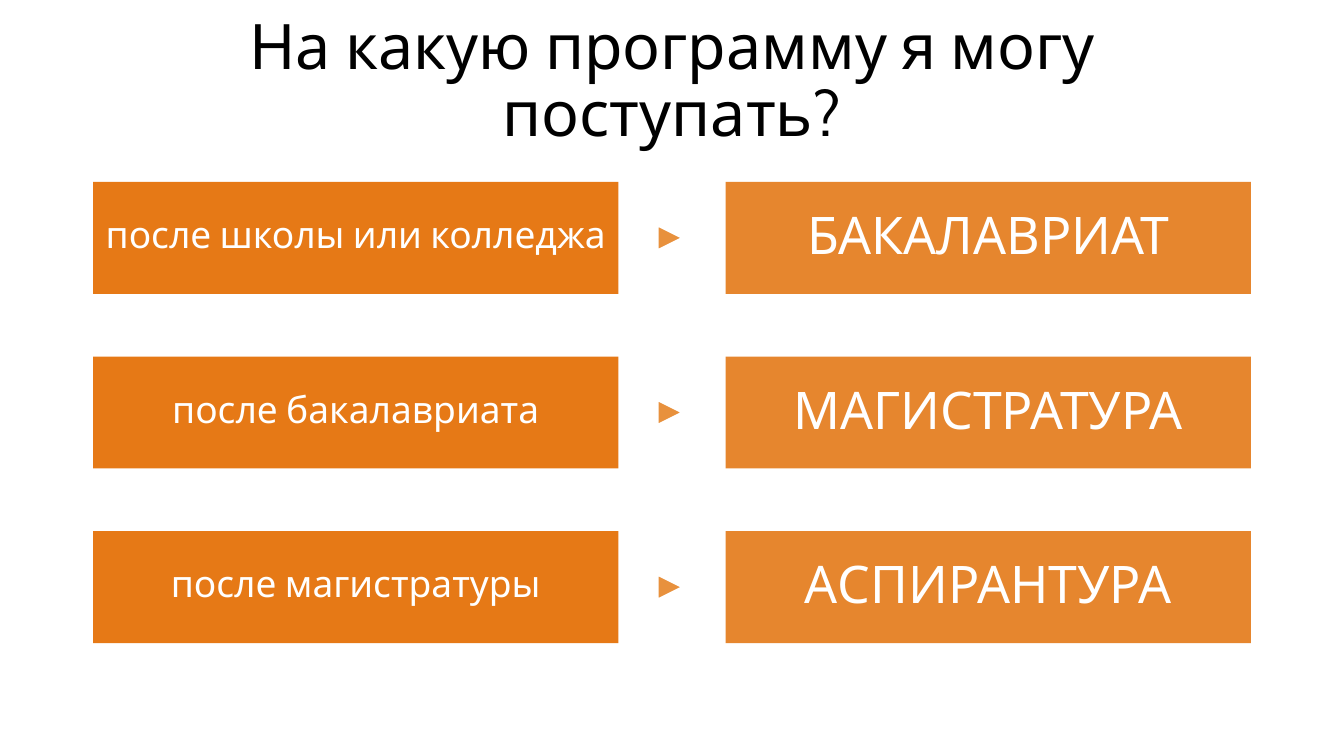
from dataclasses import dataclass

from pptx import Presentation, util as u
from pptx.dml.color import RGBColor
from pptx.enum import shapes, text


@dataclass(frozen=True)
class Theme:
    font: str = "Cabin"
    ink: str = "000000"
    paper: str = "FFFFFF"
    start_fill: str = "E67916"
    program_fill: str = "E6862E"
    arrow_fill: str = "E8913D"
    title_size: float = 89.6
    start_size: float = 53
    program_size: float = 74
    outline: float = 5


class PathwaySlide:
    """Grid of rows: a starting point, an arrow and a program."""

    width, height = 26.67, 15
    margin, box_width, box_height = 1.85, 10.42, 2.22
    first_row, row_step = 3.61, 3.465
    arrow_side = 0.54

    def __init__(self, deck, theme):
        self.theme = theme
        deck.slide_width, deck.slide_height = u.Inches(self.width), u.Inches(self.height)
        self.page = deck.slides.add_slide(deck.slide_layouts[6])

    def row_top(self, row):
        return self.first_row + row * self.row_step

    def set_words(self, shape, words, size, color, spacing, inset=0):
        frame = shape.text_frame
        frame.word_wrap = True
        frame.vertical_anchor = text.MSO_ANCHOR.MIDDLE
        frame.margin_left = frame.margin_right = u.Inches(inset)
        frame.margin_top = frame.margin_bottom = u.Inches(inset)
        frame.text = words
        para = frame.paragraphs[0]
        para.alignment = text.PP_ALIGN.CENTER
        para.line_spacing = spacing
        font = para.runs[0].font
        font.name, font.size = self.theme.font, u.Pt(size)
        font.color.rgb = RGBColor.from_string(color)

    def fill(self, shape, color):
        shape.shadow.inherit = False
        shape.fill.solid()
        shape.fill.fore_color.rgb = RGBColor.from_string(color)

    def title(self, words):
        box = self.page.shapes.add_textbox(
            u.Inches(self.margin), u.Inches(0.39),
            u.Inches(self.width - 2 * self.margin), u.Inches(2.5))
        self.set_words(box, words, self.theme.title_size, self.theme.ink, 0.9, 0.06)

    def box(self, left, row, words, color, size, spacing):
        box = self.page.shapes.add_shape(
            shapes.MSO_SHAPE.RECTANGLE, u.Inches(left), u.Inches(self.row_top(row)),
            u.Inches(self.box_width), u.Inches(self.box_height))
        self.fill(box, color)
        box.line.fill.background()
        self.set_words(box, words, size, self.theme.paper, spacing)

    def start(self, row, words):
        self.box(self.margin, row, words, self.theme.start_fill, self.theme.start_size, 0.8)

    def program(self, row, words):
        left = self.width - self.margin - self.box_width
        self.box(left, row, words, self.theme.program_fill, self.theme.program_size, 0.9)

    def arrow(self, row):
        half = self.arrow_side / 2
        # The arrow sits just left of the middle of the gap
        left = self.width / 2 - half - 0.03
        middle = self.row_top(row) + self.box_height / 2
        outline = self.page.shapes.build_freeform(
            u.Inches(left + 2 * half), u.Inches(middle))
        outline.add_line_segments([
            (u.Inches(left), u.Inches(middle + half)),
            (u.Inches(left), u.Inches(middle - half))], close=True)
        arrow = outline.convert_to_shape()
        self.fill(arrow, self.theme.arrow_fill)
        arrow.line.color.rgb = RGBColor.from_string(self.theme.paper)
        arrow.line.width = u.Pt(self.theme.outline)


def main():
    deck = Presentation()
    slide = PathwaySlide(deck, Theme())

    # Heading
    slide.title("На какую программу я могу поступать?")

    # One row for each step of education
    pathways = [
        ("после школы или колледжа", "БАКАЛАВРИАТ"),
        ("после бакалавриата", "МАГИСТРАТУРА"),
        ("после магистратуры", "АСПИРАНТУРА"),
    ]
    for row, (start, program) in enumerate(pathways):
        slide.program(row, program)
        slide.start(row, start)
        slide.arrow(row)

    deck.save("out.pptx")


if __name__ == "__main__":
    main()
